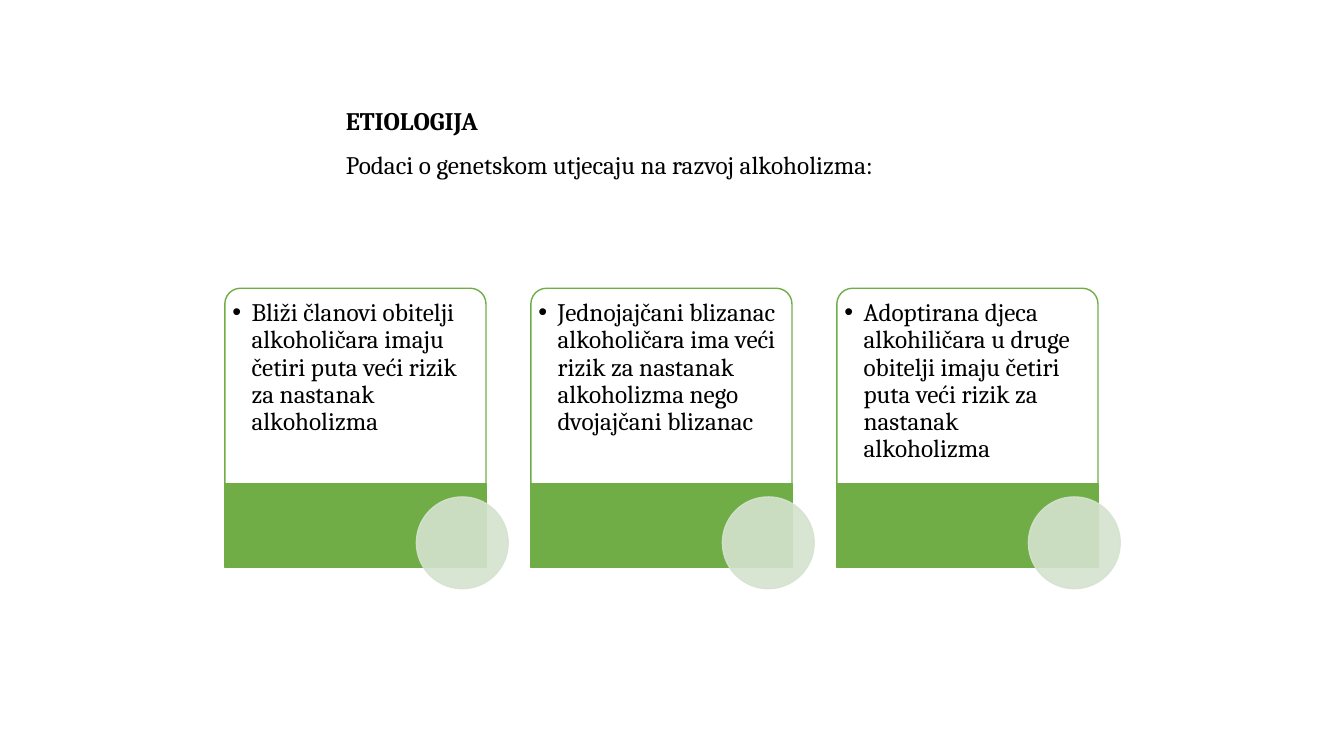
from dataclasses import dataclass

from lxml import etree
from pptx import Presentation
from pptx.dml.color import RGBColor
from pptx.enum.shapes import MSO_SHAPE
from pptx.enum.text import MSO_ANCHOR, MSO_AUTO_SIZE, PP_ALIGN
from pptx.oxml.ns import qn
from pptx.util import Inches, Pt

ROUND_TOP = MSO_SHAPE.ROUND_2_SAME_RECTANGLE
RECTANGLE = MSO_SHAPE.RECTANGLE
OVAL = MSO_SHAPE.OVAL
TOP = MSO_ANCHOR.TOP
LEFT = PP_ALIGN.LEFT
NO_AUTOFIT = MSO_AUTO_SIZE.NONE


@dataclass(frozen=True)
class Theme:
    font: str = "Cambria"
    size: int = 18
    text: RGBColor = RGBColor(0x00, 0x00, 0x00)
    white: RGBColor = RGBColor(0xFF, 0xFF, 0xFF)
    green: RGBColor = RGBColor(0x70, 0xAD, 0x47)
    pale: RGBColor = RGBColor(0xD5, 0xE3, 0xCF)
    line_width: int = 1
    opacity: int = 90


THEME = Theme()

HEADING = "ETIOLOGIJA"
INTRO = "Podaci o genetskom utjecaju na razvoj alkoholizma:"
FINDINGS = [
    "Bliži članovi obitelji alkoholičara imaju četiri puta veći rizik za nastanak alkoholizma",
    "Jednojajčani blizanac alkoholičara ima veći rizik za nastanak alkoholizma nego dvojajčani blizanac",
    "Adoptirana djeca alkohiličara u druge obitelji imaju četiri puta veći rizik za nastanak alkoholizma",
]


def style_paragraph(paragraph, bold=False):
    paragraph.alignment = LEFT
    font = paragraph.font
    font.name, font.size, font.bold = THEME.font, Pt(THEME.size), bold
    font.color.rgb = THEME.text


def set_opacity(fill_parent):
    color = fill_parent.find(qn("a:solidFill"))[0]
    etree.SubElement(color, qn("a:alpha"), val=str(THEME.opacity * 1000))


def add_bullet(paragraph, indent):
    props = paragraph._p.get_or_add_pPr()
    props.set("marL", str(Inches(indent)))
    props.set("indent", str(-Inches(indent)))
    etree.SubElement(props, qn("a:buFont"), typeface="Arial")
    etree.SubElement(props, qn("a:buChar"), char="•")
    # Bullet marks come before the default run properties
    props.append(props.find(qn("a:defRPr")))


def add_block(slide, kind, left, top, width, height, fill, line):
    block = slide.shapes.add_shape(
        kind, Inches(left), Inches(top), Inches(width), Inches(height))
    block.shadow.inherit = False
    block.fill.solid()
    block.fill.fore_color.rgb = fill
    block.line.color.rgb = line
    block.line.width = Pt(THEME.line_width)
    return block


def add_heading(slide, left, top, width, height):
    heading = slide.shapes.title
    heading.left, heading.top = Inches(left), Inches(top)
    heading.width, heading.height = Inches(width), Inches(height)
    frame = heading.text_frame
    frame.word_wrap = True
    frame.auto_size = NO_AUTOFIT
    frame.vertical_anchor = TOP
    frame.text = f"{HEADING}\n{INTRO}"
    for paragraph, bold in zip(frame.paragraphs, (True, False)):
        style_paragraph(paragraph, bold)
        paragraph.space_after = Pt(10)


def add_finding(slide, finding, left, top, width, height):
    band_height = 0.83
    body_height = height - band_height
    circle_size = 0.91

    # Card body with its bulleted finding
    body = add_block(slide, ROUND_TOP, left, top, width, body_height,
                     THEME.white, THEME.green)
    body.adjustments[0], body.adjustments[1] = 0.08, 0
    set_opacity(body._element.spPr)
    frame = body.text_frame
    frame.word_wrap = True
    frame.vertical_anchor = TOP
    frame.margin_left = frame.margin_right = frame.margin_bottom = Inches(0.03)
    frame.margin_top = Inches(0.07)
    frame.text = finding
    paragraph = frame.paragraphs[0]
    style_paragraph(paragraph)
    paragraph.line_spacing = 0.9
    add_bullet(paragraph, 0.19)

    # Green band under the body
    add_block(slide, RECTANGLE, left, top + body_height, width, band_height,
              THEME.green, THEME.green)

    # Circle over the lower right corner
    circle = add_block(slide, OVAL, left + width - 0.69, top + body_height + 0.13,
                       circle_size, circle_size, THEME.pale, THEME.pale)
    set_opacity(circle._element.spPr)
    set_opacity(circle.line._ln)


def add_findings(slide, left, top, width, height):
    card_width = 2.59
    pitch = (width - card_width) / (len(FINDINGS) - 1)
    for index, finding in enumerate(FINDINGS):
        add_finding(slide, finding, left + index * pitch, top, card_width, height)


def main():
    presentation = Presentation()
    presentation.slide_width = Inches(13.33)
    presentation.slide_height = Inches(7.5)
    title_only = presentation.slide_layouts[5]
    slide = presentation.slides.add_slide(title_only)
    add_heading(slide, 3.33, 0.99, 6.67, 0.85)
    add_findings(slide, 2.23, 2.86, 8.66, 2.77)
    presentation.save("out.pptx")


if __name__ == "__main__":
    main()
